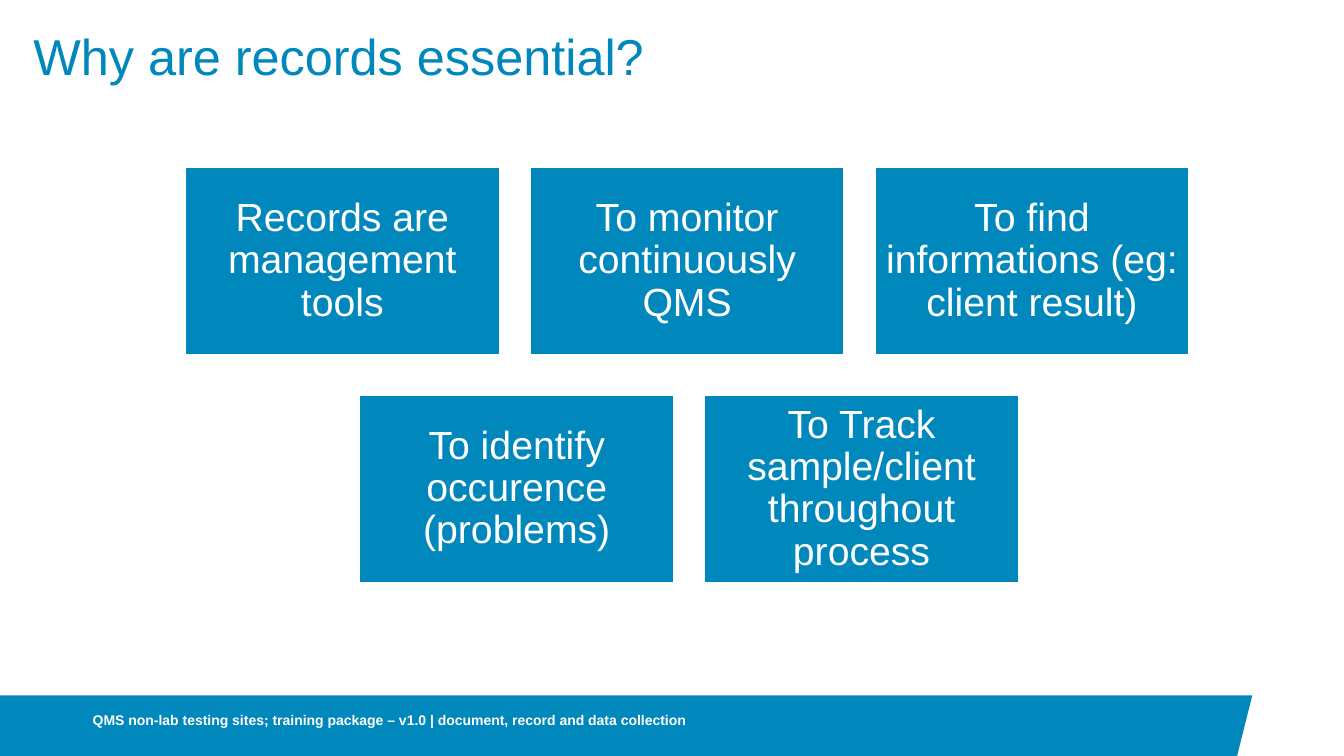
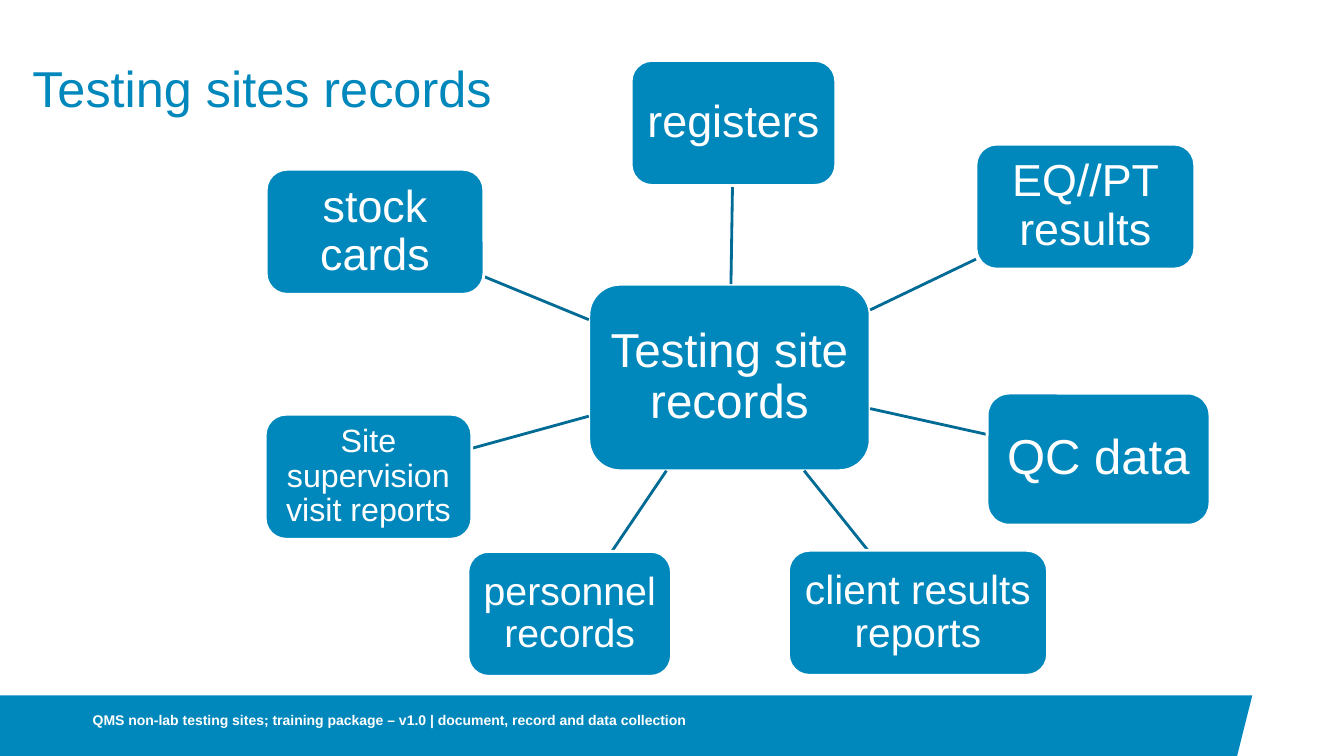
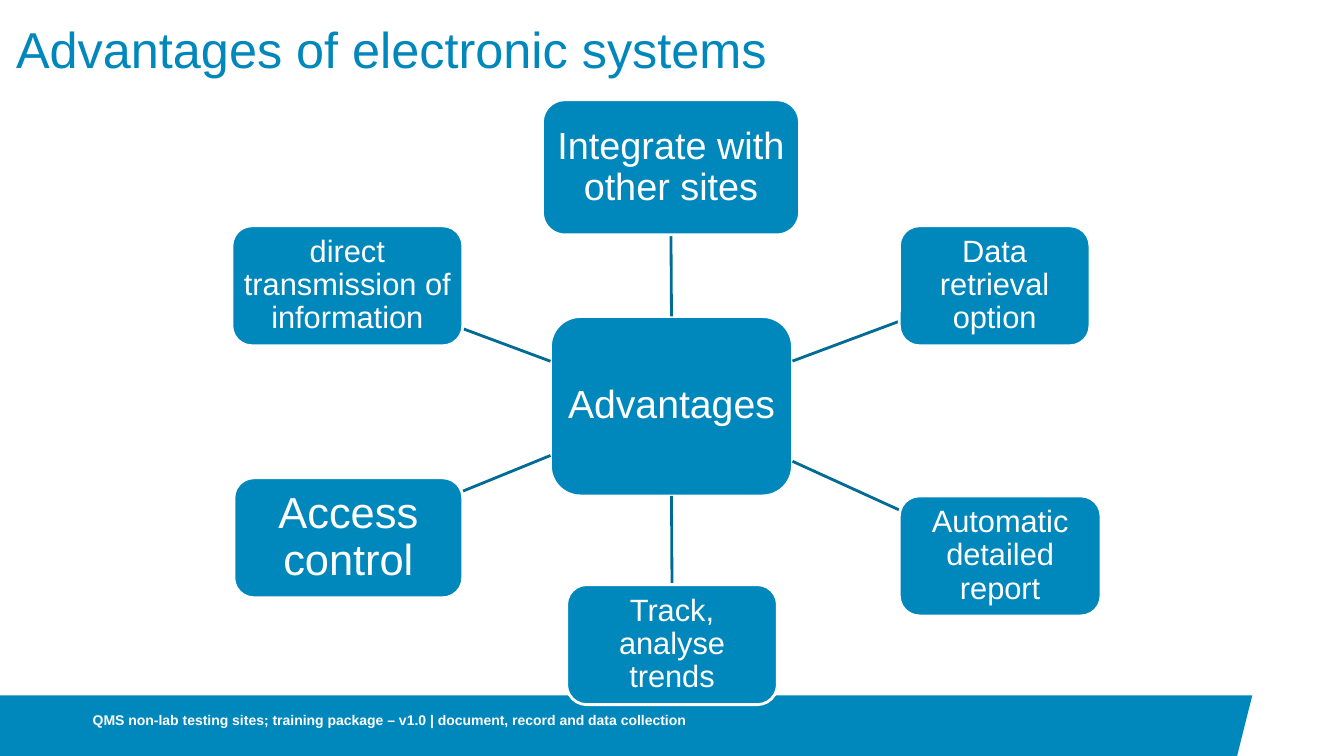
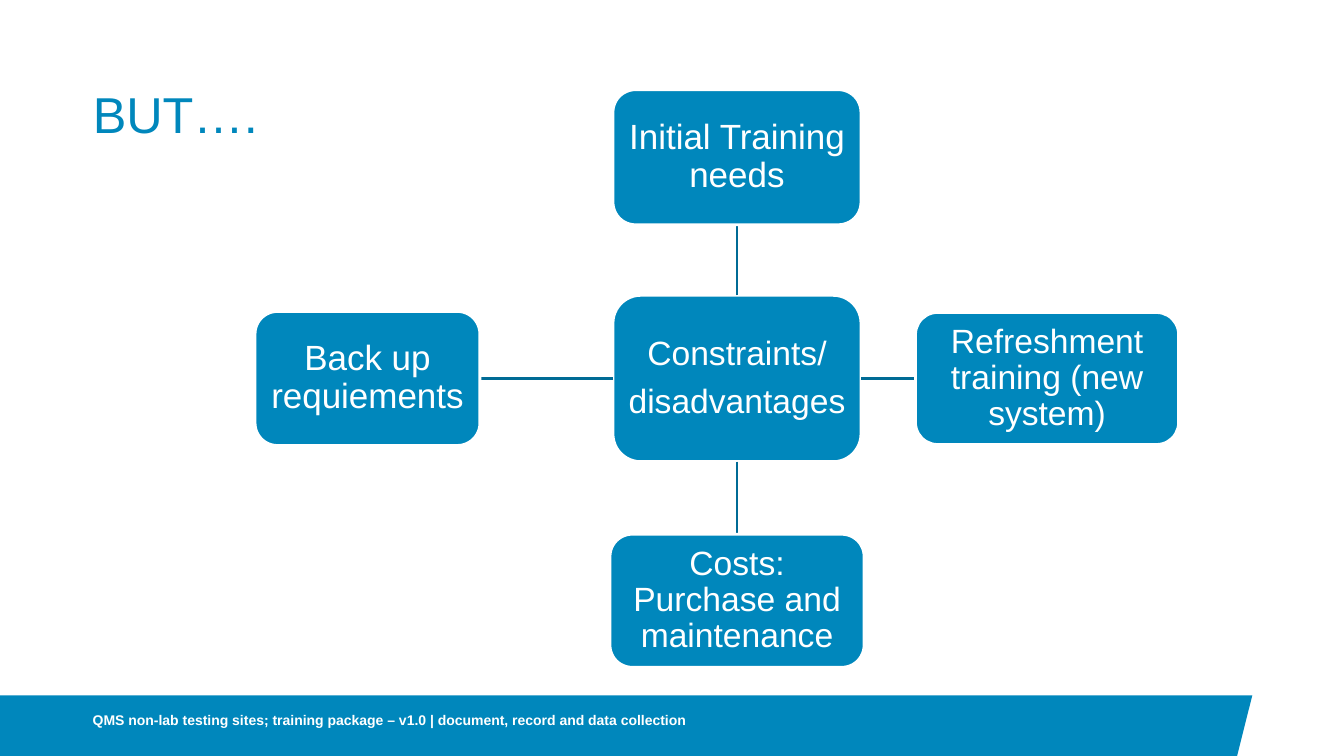
from pptx import Presentation
from pptx.dml.color import RGBColor
from pptx.enum.shapes import MSO_CONNECTOR, MSO_SHAPE
from pptx.enum.text import MSO_ANCHOR, PP_ALIGN
from pptx.oxml.ns import qn
from pptx.util import Inches, Pt
from lxml import etree

RECT, ROUNDED = MSO_SHAPE.RECTANGLE, MSO_SHAPE.ROUNDED_RECTANGLE
STRAIGHT = MSO_CONNECTOR.STRAIGHT
BOTTOM, MIDDLE = MSO_ANCHOR.BOTTOM, MSO_ANCHOR.MIDDLE
LEFT, CENTER = PP_ALIGN.LEFT, PP_ALIGN.CENTER
SIDE_TOP, SIDE_LEFT, SIDE_BOTTOM, SIDE_RIGHT = range(4)

BLUE, DARK_BLUE, WHITE = "0087BC", "006B95", "FFFFFF"
FONT = "Arial"
FOOTER = ("QMS non-lab testing sites; training package – v1.0 | "
          "document, record and data collection")
TITLE_ONLY = 5

REASON_ROWS = [
    (1.83, 1.65, ["Records are management tools",
                  "To monitor continuously QMS",
                  "To find informations (eg: client result)"]),
    (3.56, 3.91, ["To identify occurence (problems)",
                  "To Track sample/client throughout process"]),
]

# Each node: left, top, width, height, text size, paragraphs. The hub is first.
SITE_RECORDS = [
    (5.84, 2.82, 2.79, 1.85, 34, ["Testing site records"]),
    (6.26, 0.6, 2.03, 1.24, 32, ["registers"]),
    (9.68, 1.43, 2.17, 1.24, 32, ["EQ//PT results"]),
    (9.79, 3.9, 2.21, 1.31, 35, ["QC data"]),
    (7.82, 5.46, 2.57, 1.24, 29, ["client results reports"]),
    (4.64, 5.47, 2.02, 1.24, 28, ["personnel records"]),
    (2.63, 4.11, 2.05, 1.24, 23, ["Site supervision visit reports"]),
    (2.64, 1.68, 2.16, 1.24, 32, ["stock cards"]),
]
ADVANTAGES = [
    (5.46, 3.14, 2.4, 1.78, 28, ["Advantages"]),
    (5.38, 0.99, 2.55, 1.34, 27, ["Integrate with other sites"]),
    (8.92, 2.24, 1.89, 1.19, 22, ["Data retrieval option"]),
    (8.92, 4.92, 2, 1.19, 22, ["Automatic detailed report"]),
    (5.62, 5.8, 2.09, 1.19, 22, ["Track, analyse trends"]),
    (2.32, 4.74, 2.27, 1.19, 31, ["Access control"]),
    (2.3, 2.24, 2.29, 1.19, 22, ["direct transmission of information"]),
]
CONSTRAINTS = [
    (6.08, 2.93, 2.46, 1.65, 24, ["Constraints/", "disadvantages"]),
    (6.08, 0.89, 2.46, 1.34, 25, ["Initial Training needs"]),
    (9.08, 3.1, 2.61, 1.31, 24, ["Refreshment training (new system)"]),
    (6.05, 5.3, 2.52, 1.32, 24, ["Costs: Purchase and maintenance"]),
    (2.53, 3.09, 2.23, 1.33, 25, ["Back up requiements"]),
]


def rgb(value):
    return RGBColor.from_string(value)


def write(frame, paragraphs, size, color, align=LEFT, anchor=MIDDLE,
          margin=0, spacing=0.9, bold=False):
    frame.word_wrap = True
    frame.vertical_anchor = anchor
    frame.margin_left = frame.margin_right = margin
    frame.margin_top = frame.margin_bottom = margin
    for index, text in enumerate(paragraphs):
        paragraph = frame.add_paragraph() if index else frame.paragraphs[0]
        paragraph.alignment = align
        paragraph.line_spacing = spacing
        paragraph.space_before = Pt(8.4 if index else 0)
        run = paragraph.add_run()
        run.text = text
        run.font.name, run.font.size, run.font.bold = FONT, Pt(size), bold
        run.font.color.rgb = rgb(color)


def move_band_to_layout(slide):
    """Draw the slanted footer band and put it behind everything on the layout."""
    builder = slide.shapes.build_freeform(0, Inches(6.9))
    corners = [(12.42, 6.9), (12.27, 7.5), (0, 7.5)]
    builder.add_line_segments([(Inches(x), Inches(y)) for x, y in corners])
    band = builder.convert_to_shape()
    band.shadow.inherit = False
    band.fill.solid()
    band.fill.fore_color.rgb = rgb(BLUE)
    band.line.fill.background()
    slide.slide_layout.element.cSld.spTree.insert(2, band.element)


def add_slide(prs, title, left, top, height=1.03, anchor=BOTTOM):
    slide = prs.slides.add_slide(prs.slide_layouts[TITLE_ONLY])
    heading = slide.shapes.title
    heading.left, heading.top = Inches(left), Inches(top)
    heading.width, heading.height = Inches(11.5), Inches(height)
    write(heading.text_frame, [title], 36, BLUE, anchor=anchor)
    footer = slide.shapes.add_textbox(
        Inches(0.92), Inches(6.95), Inches(8), Inches(0.38))
    write(footer.text_frame, [FOOTER], 10, WHITE, spacing=1.0, bold=True)
    return slide


def add_box(slide, kind, left, top, width, height, size, paragraphs, margin):
    """Add a blue box; margin is a share of the text size."""
    box = slide.shapes.add_shape(
        kind, Inches(left), Inches(top), Inches(width), Inches(height))
    box.shadow.inherit = False
    box.fill.solid()
    box.fill.fore_color.rgb = rgb(BLUE)
    box.line.color.rgb = rgb(WHITE)
    box.line.width = Pt(2)
    write(box.text_frame, paragraphs, size, WHITE, CENTER,
          margin=Pt(size * margin))
    return box


def center(box):
    return box.left + box.width / 2, box.top + box.height / 2


def edge_point(box, dx, dy):
    """Where a ray from the centre of the box along (dx, dy) meets its edge."""
    x, y = center(box)
    reach = min(half / abs(delta)
                for half, delta in ((box.width / 2, dx), (box.height / 2, dy))
                if delta)
    return round(x + dx * reach), round(y + dy * reach)


def add_spoke(slide, hub, node):
    """Join two boxes along the line between their centres."""
    (hub_x, hub_y), (node_x, node_y) = center(hub), center(node)
    dx, dy = node_x - hub_x, node_y - hub_y
    spoke = slide.shapes.add_connector(
        STRAIGHT, *edge_point(hub, dx, dy), *edge_point(node, -dx, -dy))
    spoke.line.color.rgb = rgb(DARK_BLUE)
    spoke.line.width = Pt(2)
    etree.SubElement(spoke.element.spPr, qn("a:effectLst"))
    sides = None
    if abs(dx) < Inches(0.02):
        sides = (SIDE_TOP, SIDE_BOTTOM) if dy < 0 else (SIDE_BOTTOM, SIDE_TOP)
    elif abs(dy) < Inches(0.02):
        sides = (SIDE_LEFT, SIDE_RIGHT) if dx < 0 else (SIDE_RIGHT, SIDE_LEFT)
    if sides:
        spoke.begin_connect(hub, sides[0])
        spoke.end_connect(node, sides[1])
    spoke.element.addnext(node.element)  # the white outline covers the line end


def add_hub_diagram(slide, nodes):
    hub, *others = [add_box(slide, ROUNDED, *node, margin=0.18)
                    for node in nodes]
    for node in others:
        add_spoke(slide, hub, node)


def add_reason_grid(slide):
    for left, top, reasons in REASON_ROWS:
        for column, reason in enumerate(reasons):
            add_box(slide, RECT, left + column * 3.42, top, 3.13, 1.88,
                    28, [reason], margin=0.28)


def main():
    prs = Presentation()
    prs.slide_width, prs.slide_height = Inches(13.33), Inches(7.5)

    reasons = add_slide(prs, "Why are records essential?", 0.33, 0, 0.86)
    move_band_to_layout(reasons)
    add_reason_grid(reasons)

    add_hub_diagram(add_slide(prs, "Testing sites records", 0.32, 0.15),
                    SITE_RECORDS)
    add_hub_diagram(add_slide(prs, "Advantages of electronic systems",
                              0.16, 0, anchor=MIDDLE), ADVANTAGES)
    add_hub_diagram(add_slide(prs, "BUT….", 0.92, 0.4), CONSTRAINTS)

    prs.save("out.pptx")


if __name__ == "__main__":
    main()
